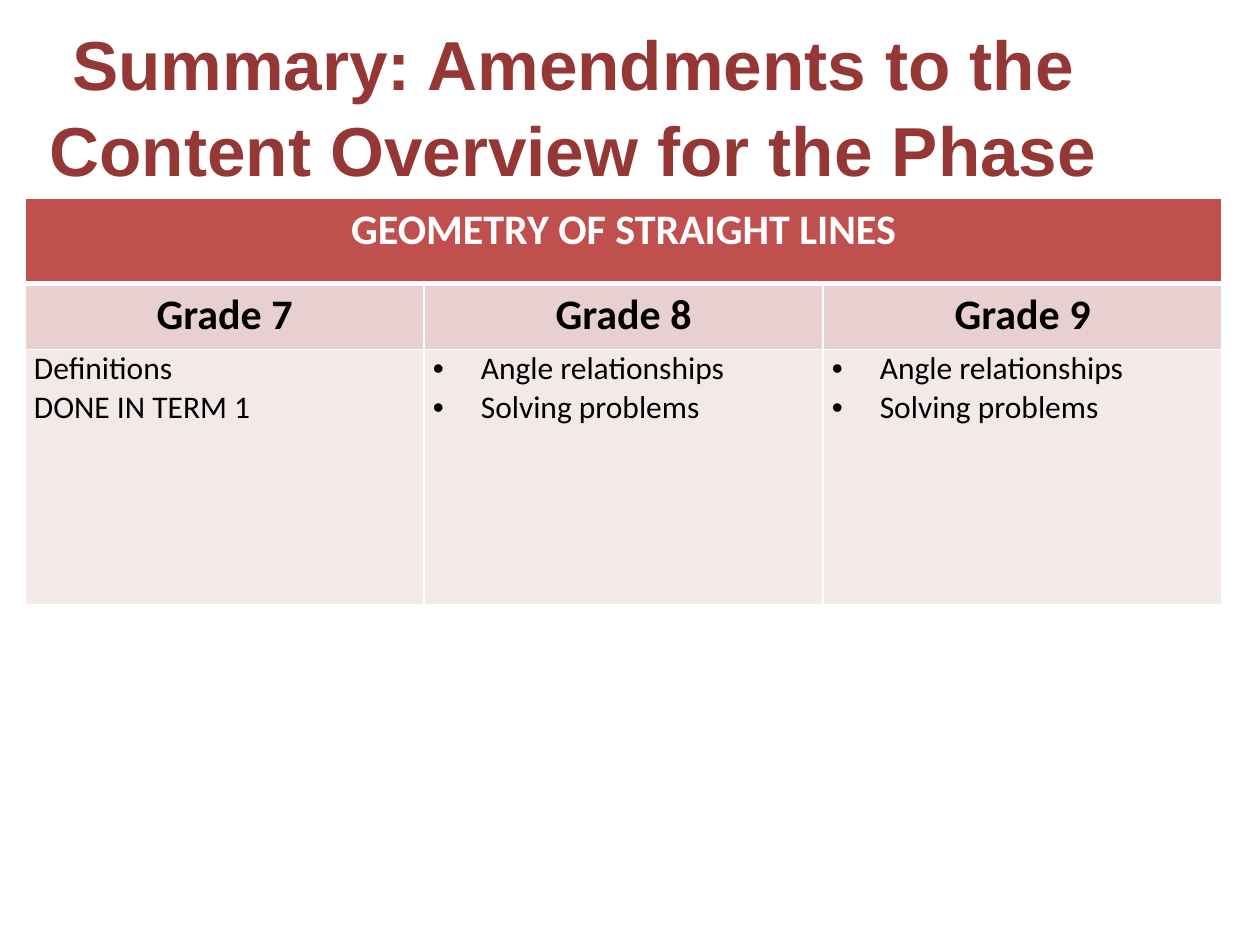
from lxml.etree import SubElement
from pptx import Presentation
from pptx.dml.color import RGBColor as Color
from pptx.enum.text import MSO_ANCHOR as Anchor, PP_ALIGN as Align
from pptx.oxml.ns import qn
from pptx.util import Inches, Pt

COLOURS = {"title": "953735", "banner": "C0504D", "grade": "E8D0D0",
           "body": "F4E9E9", "black": "000000", "white": "FFFFFF"}
GRADES = ["Grade 7", "Grade 8", "Grade 9"]
ANGLES = ["Angle relationships", "Solving problems"]
TOPICS = [["Definitions", "DONE IN TERM 1"], ANGLES, ANGLES]


class SlideBuilder:
    def __init__(self, deck):
        self.deck = deck
        self.page = deck.slides.add_slide(deck.slide_layouts[6])

    def place(self, left, top, width, height):
        across, down = self.deck.slide_width, self.deck.slide_height
        return [round(share * side) for share, side in
                zip((left, top, width, height), (across, down) * 2)]

    def fill_text(self, frame, lines, size, colour, font="Calibri",
                  bold=False, align=Align.LEFT, bullets=False):
        for index, line in enumerate(lines):
            para = frame.add_paragraph() if index else frame.paragraphs[0]
            para.text = line
            para.alignment = align
            para.font.name, para.font.size, para.font.bold = font, Pt(size), bold
            para.font.color.rgb = Color.from_string(COLOURS[colour])
            if bullets:
                self.bullet(para)

    def bullet(self, para):
        props = para._p.get_or_add_pPr()
        props.set("marL", str(Inches(0.38)))
        props.set("indent", str(-Inches(0.38)))
        mark_font = props.makeelement(qn("a:buFont"), {"typeface": "Arial"})
        mark = props.makeelement(qn("a:buChar"), {"char": "•"})
        props.insert(0, mark_font)
        props.insert(1, mark)

    def title(self, text, area):
        box = self.page.shapes.add_textbox(*self.place(*area))
        frame = box.text_frame
        frame.word_wrap = True
        frame.vertical_anchor = Anchor.MIDDLE
        self.fill_text(frame, [text], 39.6, "title", "Arial", True, Align.CENTER)
        frame.paragraphs[0].line_spacing = 1.04

    def table(self, area, heights, columns):
        grid = self.page.shapes.add_table(len(heights), columns, *self.place(*area)).table
        for row, height in zip(grid.rows, heights):
            row.height = round(height * self.deck.slide_height)
        return grid

    def cell(self, cell, lines, fill, bottom=1, **style):
        self.fill_text(cell.text_frame, lines, **style)
        props = cell._tc.get_or_add_tcPr()
        for side in "LRTB":
            line = SubElement(props, qn(f"a:ln{side}"))
            line.set("w", str(Pt(bottom if side == "B" else 1)))
            paint = SubElement(line, qn("a:solidFill"))
            SubElement(paint, qn("a:srgbClr")).set("val", COLOURS["white"])
        cell.fill.solid()
        cell.fill.fore_color.rgb = Color.from_string(COLOURS[fill])


def main():
    deck = Presentation()
    deck.slide_width, deck.slide_height = Inches(10), Inches(7.5)
    slide = SlideBuilder(deck)
    slide.title("Summary: Amendments to the Content Overview for the Phase",
                (-0.01, 0.02, 0.93, 0.18))

    heights = [0.09, 0.07, 0.27]
    grid = slide.table((0.02, 0.21, 0.95, sum(heights)), heights, len(GRADES))
    heading = dict(size=24, bold=True, align=Align.CENTER)
    grid.cell(0, 0).merge(grid.cell(0, len(GRADES) - 1))
    slide.cell(grid.cell(0, 0), ["GEOMETRY OF STRAIGHT LINES"], "banner",
               bottom=3, colour="white", **heading)
    for column, (grade, topics) in enumerate(zip(GRADES, TOPICS)):
        slide.cell(grid.cell(1, column), [grade], "grade", colour="black", **heading)
        body = grid.cell(2, column)
        body.margin_left = body.margin_right = Inches(0.07)
        body.margin_top = body.margin_bottom = 0
        slide.cell(body, topics, "body", size=18, colour="black",
                   bullets=topics is ANGLES)
    deck.save("out.pptx")


if __name__ == "__main__":
    main()
